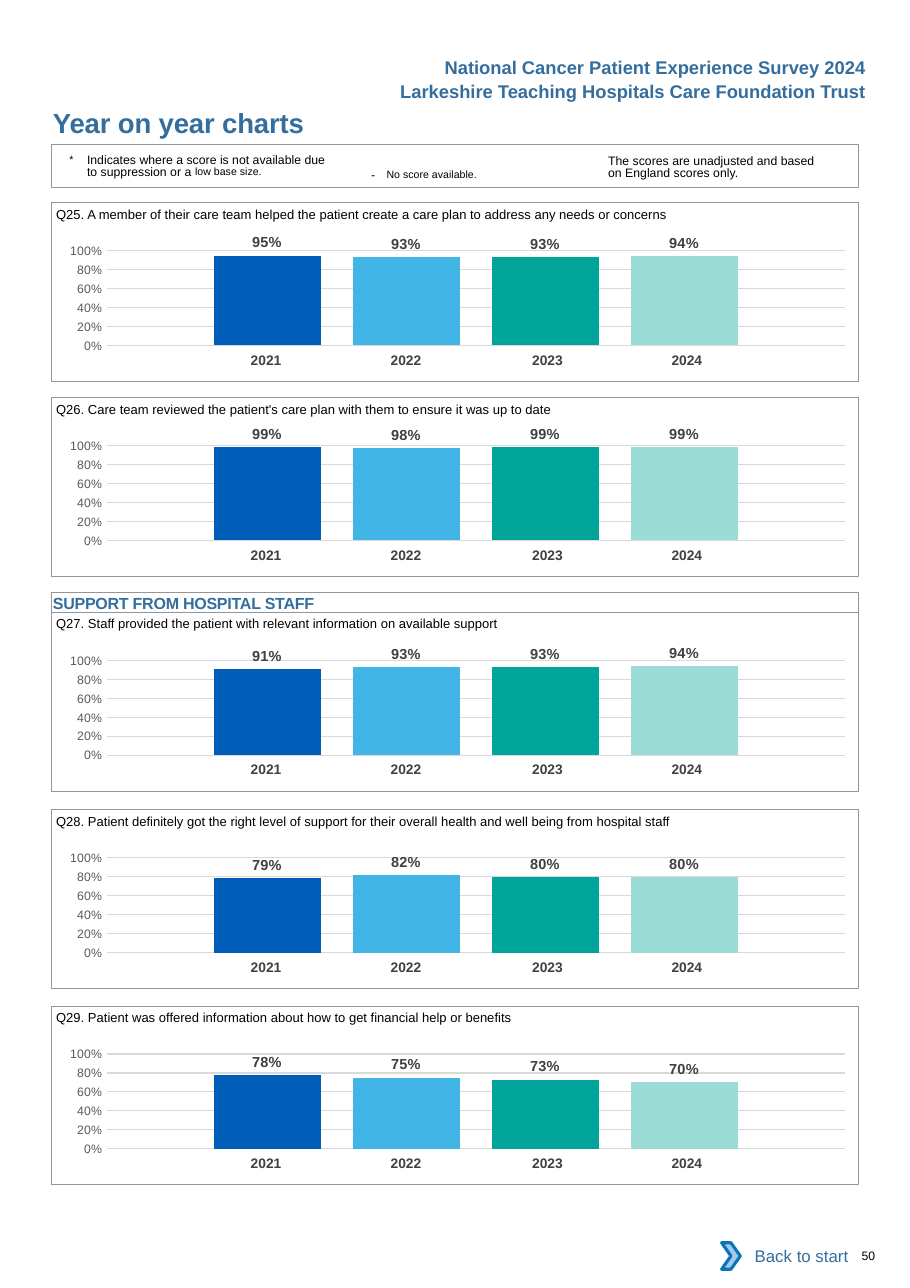
from dataclasses import dataclass

from lxml import etree
from pptx import Presentation
from pptx.chart.data import CategoryChartData
from pptx.dml.color import RGBColor
from pptx.enum import chart as ch, shapes, text
from pptx.oxml import parse_xml
from pptx.oxml.ns import nsdecls, qn
from pptx.util import Inches, Pt


@dataclass(frozen=True)
class Theme:
    font: str = "Arial"
    blue: str = "336E9F"
    black: str = "000000"
    frame: str = "939598"
    year: str = "414042"
    label: str = "404040"
    axis: str = "595959"
    grid: str = "D9D9D9"
    arrow_fill: str = "A8C7E9"
    arrow_line: str = "0A74BB"
    bars: tuple = ("005EB8", "41B6E6", "00A499", "9CDCD7")
    title: float = 18
    header: float = 12
    link: float = 11
    section: float = 10.5
    value: float = 9.5
    years: float = 9
    question: float = 8.5
    small: float = 8


T = Theme()
LEFT, WIDTH, PANEL_H = 0.47, 7.32, 1.62
YEARS = ("2021", "2022", "2023", "2024")
NO_STYLE = "{2D5ABB26-0587-4C30-8999-92F81FD0307C}"

# Top of the panel, question, score for each year
PANELS = (
    (1.84, "Q25. A member of their care team helped the patient create a care plan "
           "to address any needs or concerns", (0.95, 0.93, 0.93, 0.94)),
    (3.61, "Q26. Care team reviewed the patient's care plan with them to ensure it "
           "was up to date", (0.99, 0.98, 0.99, 0.99)),
    (5.56, "Q27. Staff provided the patient with relevant information on available "
           "support", (0.91, 0.93, 0.93, 0.94)),
    (7.35, "Q28. Patient definitely got the right level of support for their overall "
           "health and well being from hospital staff", (0.79, 0.82, 0.80, 0.80)),
    (9.13, "Q29. Patient was offered information about how to get financial help or "
           "benefits", (0.78, 0.75, 0.73, 0.70)),
)


def rgb(value):
    return RGBColor.from_string(value)


def style(font, size, color, bold=False):
    font.name, font.size, font.bold = T.font, Pt(size), bold
    font.color.rgb = rgb(color)


def box(*lengths):
    return [Inches(n) for n in lengths]


def write(sp, content, size, color=T.black, bold=False, align=text.PP_ALIGN.LEFT,
          inset=(0, 0, 0, 0), anchor=text.MSO_ANCHOR.TOP, wrap=True, spacing=0):
    """Fill a shape with one paragraph; inset is left, top, right, bottom."""
    tf = sp.text_frame
    tf.word_wrap, tf.vertical_anchor = wrap, anchor
    tf.auto_size = text.MSO_AUTO_SIZE.NONE
    tf.margin_left, tf.margin_top, tf.margin_right, tf.margin_bottom = box(*inset)
    p = tf.paragraphs[0]
    p.alignment = align
    style(p.font, size, color, bold)
    if content:
        r = p.add_run()
        r.text = content
        if spacing:
            r.font._element.set("spc", str(spacing))
    return p


def add_text(slide, at, content, size, **options):
    return write(slide.shapes.add_textbox(*box(*at)), content, size, **options)


def add_raised(p, content, baseline):
    """Add a 12 pt run lifted by a percentage, which also draws it smaller."""
    r = p.add_run()
    r.text = content
    r.font.size = Pt(12)
    r.font._element.set("baseline", str(baseline * 1000))


def add_shape(slide, at, kind=shapes.MSO_SHAPE.RECTANGLE, fill=None, line=None, weight=0.5):
    sp = slide.shapes.add_shape(kind, *box(*at))
    sp.shadow.inherit = False
    if fill:
        sp.fill.solid()
        sp.fill.fore_color.rgb = rgb(fill)
    else:
        sp.fill.background()
    if line:
        sp.line.color.rgb = rgb(line)
        sp.line.width = Pt(weight)
    else:
        sp.line.fill.background()
    return sp


def add_years(slide, top):
    table = slide.shapes.add_table(1, len(YEARS), *box(1.73, top, 5.15, 0.27)).table
    table.first_row = table.horz_banding = False
    table._tbl.tblPr.find(qn("a:tableStyleId")).text = NO_STYLE
    widths, right_margins = (1.27, 1.27, 1.34, 1.27), (0, 0, 0.04, 0.12)
    for i, year in enumerate(YEARS):
        table.columns[i].width = Inches(widths[i])
        cell = table.cell(0, i)
        cell.fill.background()
        cell.margin_left, cell.margin_right = box(0.1, right_margins[i])
        cell.text = year
        p = cell.text_frame.paragraphs[0]
        p.alignment = text.PP_ALIGN.CENTER
        style(p.font, T.years, T.year, True)


def place_plot(chart, **shares):
    """Fix the inner plot area at shares of the chart's size."""
    plot_area = chart._chartSpace.chart.plotArea
    for old in plot_area.findall(qn("c:layout")):
        plot_area.remove(old)
    layout = parse_xml(f'<c:layout {nsdecls("c")}><c:manualLayout/></c:layout>')
    settings = {"layoutTarget": "inner", "xMode": "edge", "yMode": "edge", **shares}
    for name, value in settings.items():
        etree.SubElement(layout[0], qn(f"c:{name}")).set("val", str(value))
    plot_area.insert(0, layout)


def add_scores(slide, top, scores):
    data = CategoryChartData(number_format="0%")
    data.categories = ["1"]
    for i, score in enumerate(scores, 1):
        data.add_series(f"Series {i}", [score])
    chart = slide.shapes.add_chart(
        ch.XL_CHART_TYPE.COLUMN_CLUSTERED, *box(0.39, top, WIDTH, 1.29), data).chart
    chart.has_legend = chart.has_title = False
    chart.font.name, chart.font.size = "Calibri", Pt(10)
    chart.category_axis.visible = False

    axis = chart.value_axis
    axis.minimum_scale, axis.maximum_scale, axis.major_unit = 0, 1, 0.2
    axis.major_tick_mark = axis.minor_tick_mark = ch.XL_TICK_MARK.NONE
    axis.format.line.fill.background()
    axis.major_gridlines.format.line.color.rgb = rgb(T.grid)
    axis.major_gridlines.format.line.width = Pt(0.75)
    axis.tick_labels.number_format = "0%"
    axis.tick_labels.number_format_is_linked = False
    style(axis.tick_labels.font, T.small, T.axis)

    plot = chart.plots[0]
    plot.gap_width, plot.overlap, plot.vary_by_categories = 200, -30, False
    for series, color in zip(plot.series, T.bars):
        series.format.fill.solid()
        series.format.fill.fore_color.rgb = rgb(color)
        labels = series.data_labels
        labels.show_value = True
        labels.position = ch.XL_LABEL_POSITION.OUTSIDE_END
        labels.number_format, labels.number_format_is_linked = "0%", False
        style(labels.font, T.value, T.label, True)
    place_plot(chart, x=0.079, y=0.145, w=0.915, h=0.666)


def add_panel(slide, top, question, scores):
    add_years(slide, top + 1.31)
    add_scores(slide, top + 0.25, scores)
    add_shape(slide, (LEFT, top, WIDTH, PANEL_H), line=T.frame)
    add_text(slide, (0.51, top - 0.06, 7.2, 0.24), question, T.question,
             inset=(0, 0.09, 0, 0))


def add_heading(slide):
    for top, line in ((0.46, "National Cancer Patient Experience Survey 2024"),
                      (0.68, "Larkeshire Teaching Hospitals Care Foundation Trust")):
        add_text(slide, (3.44, top, 4.52, 0.3), line, T.header, color=T.blue, bold=True,
                 align=text.PP_ALIGN.RIGHT, inset=(0.1, 0.05, 0.1, 0.05), wrap=False)
    title = slide.shapes.title
    title.left, title.top, title.width, title.height = box(LEFT + 0.01, 0.96, 4.5, 0.3)
    write(title, "Year on year charts", T.title, color=T.blue, bold=True, spacing=-10)


def add_notes_band(slide):
    unadjusted = add_text(slide, (5.52, 1.38, 1.95, 0.27), "The scores are unadjusted and "
                          "based on England scores only.", T.small, inset=(0, 0.03, 0, 0))
    unadjusted.line_spacing = Pt(8.1)
    missing = add_text(slide, (3.27, 1.41, 1.83, 0.24), "- ", T.small,
                       inset=(0.1, 0.05, 0.1, 0.05), spacing=260)
    add_raised(missing, "No score available.", 3)
    suppressed = add_text(slide, (0.63, 1.38, 2.38, 0.27), "", T.small, inset=(0, 0.03, 0, 0))
    suppressed.line_spacing = Pt(8.1)
    indent = Inches(0.16)
    suppressed._p.pPr.set("marL", str(int(indent)))
    suppressed._p.pPr.set("indent", str(-int(indent)))
    add_raised(suppressed, "*\t", 3)
    r = suppressed.add_run()
    r.text = "Indicates where a score is not available due to suppression or a "
    add_raised(suppressed, "low base size.", 7)
    add_shape(slide, (LEFT, 1.31, WIDTH, 0.39), line=T.frame, weight=0.75)


def add_footer(slide):
    link = add_shape(slide, (6.62, 11.19, 1.18, 0.42), fill="FFFFFF")
    write(link, "Back to start", T.link, color=T.blue, align=text.PP_ALIGN.RIGHT,
          inset=(0.1, 0.05, 0.1, 0.05), anchor=text.MSO_ANCHOR.MIDDLE)
    add_shape(slide, (6.55, 11.28, 0.17, 0.24), shapes.MSO_SHAPE.CHEVRON,
              fill=T.arrow_fill, line=T.arrow_line, weight=2)
    add_text(slide, (7.82, 11.33, 0.4, 0.13), "50", T.small)


def main():
    prs = Presentation()
    prs.slide_width, prs.slide_height = box(8.26, 11.69)
    slide = prs.slides.add_slide(prs.slide_layouts[5])
    add_heading(slide)
    add_notes_band(slide)
    for panel in PANELS:
        add_panel(slide, *panel)
    section = add_shape(slide, (LEFT, 5.38, WIDTH, 0.18), line=T.frame)
    write(section, "SUPPORT FROM HOSPITAL STAFF", T.section, color=T.blue, bold=True,
          inset=(0.01, 0.01, 0, 0), spacing=-15)
    add_footer(slide)
    prs.save("out.pptx")


if __name__ == "__main__":
    main()
